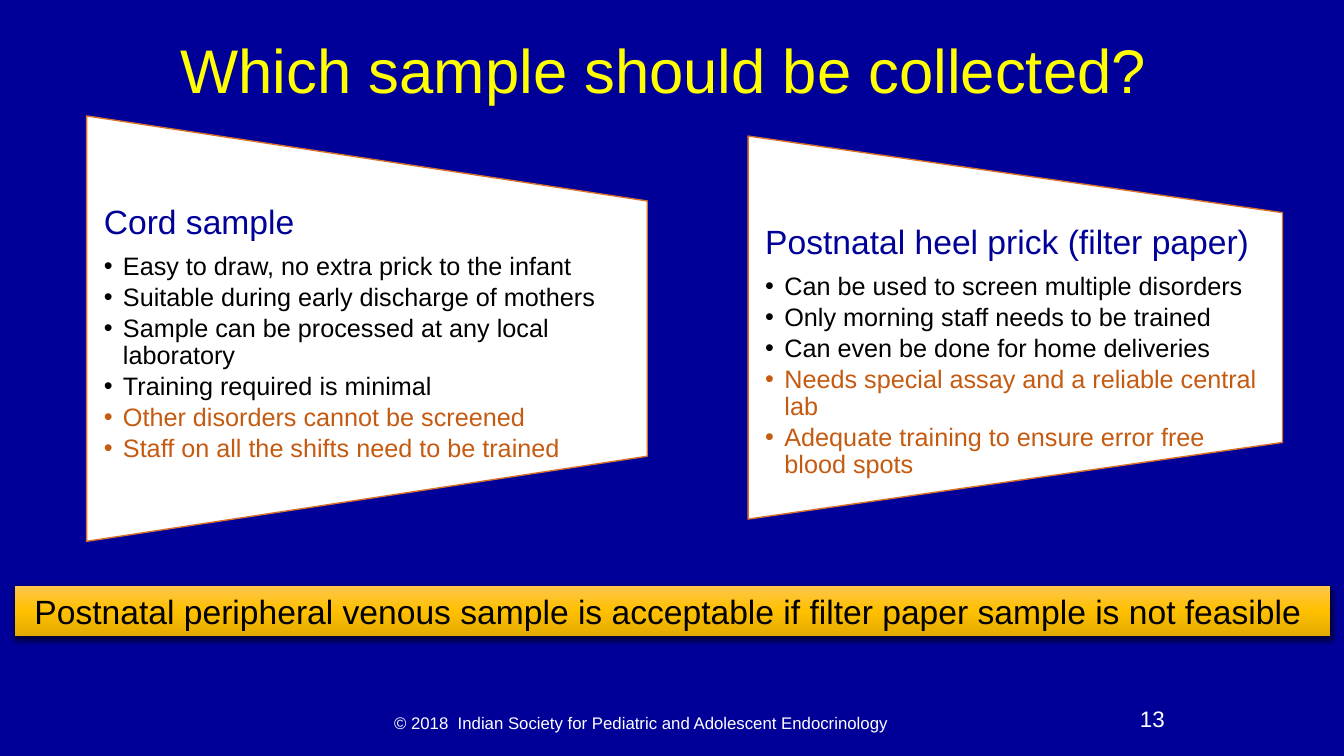
from copy import deepcopy

from lxml import etree
from pptx import Presentation
from pptx.dml.color import RGBColor
from pptx.enum.shapes import MSO_SHAPE
from pptx.enum.text import MSO_ANCHOR, MSO_AUTO_SIZE, PP_ALIGN
from pptx.oxml.ns import qn
from pptx.util import Inches, Pt

CENTER, LEFT = PP_ALIGN.CENTER, PP_ALIGN.LEFT
MIDDLE, TOP = MSO_ANCHOR.MIDDLE, MSO_ANCHOR.TOP
FIXED = MSO_AUTO_SIZE.NONE
RECTANGLE = MSO_SHAPE.RECTANGLE
TITLE_ONLY = 5
FONT = "Arial"
COLORS = {
    "background": "000099", "title": "FFFF00", "heading": "000099",
    "benefit": "000000", "drawback": "C55A11", "panel": "FFFFFF",
    "outline": "D7712C", "footer": "FFFFFF", "banner_text": "000000",
    "shadow": "000000", "banner_top": "FFC64B", "banner_middle": "FFC000",
    "banner_bottom": "E3AB00",
}
TAPER = 0.2  # share of a panel's height lost at each right-hand corner

# Panel: left, top, width, height, heading, benefits, drawbacks
PANELS = [
    (0.86, 1.15, 5.56, 4.22, "Cord sample",
     ["Easy to draw, no extra prick to the infant",
      "Suitable during early discharge of mothers",
      "Sample can be processed at any local laboratory",
      "Training required is minimal"],
     ["Other disorders cannot be screened",
      "Staff on all the shifts need to be trained"]),
    (7.42, 1.35, 5.3, 3.8, "Postnatal heel prick (filter paper)",
     ["Can be used to screen multiple disorders",
      "Only morning staff needs to be trained",
      "Can even be done for home deliveries"],
     ["Needs special assay and a reliable central lab",
      "Adequate training to ensure error free blood spots"]),
]


def rgb(name):
    return RGBColor.from_string(COLORS[name])


def style(paragraph, size, color, align=CENTER):
    paragraph.alignment = align
    paragraph.font.name = FONT
    paragraph.font.size = Pt(size)
    paragraph.font.color.rgb = rgb(color)


def set_text(shape, text, size, color, anchor=MIDDLE):
    frame = shape.text_frame
    frame.auto_size = FIXED
    frame.word_wrap = True
    frame.vertical_anchor = anchor
    frame.text = text
    style(frame.paragraphs[0], size, color)
    return frame.paragraphs[0]


def add_label(slide, box, text, size, anchor):
    label = slide.shapes.add_textbox(*map(Inches, box))
    set_text(label, text, size, "footer", anchor)


def add_bullet(paragraph, color):
    properties = paragraph._p.get_or_add_pPr()
    properties.set("marL", str(Inches(0.19)))
    properties.set("indent", str(Inches(-0.19)))
    bullet_color = etree.SubElement(properties, qn("a:buClr"))
    etree.SubElement(bullet_color, qn("a:srgbClr"), val=COLORS[color])
    etree.SubElement(properties, qn("a:buFont"), typeface=FONT)
    etree.SubElement(properties, qn("a:buChar"), char="•")


def add_panel(slide, left, top, width, height, heading, benefits, drawbacks):
    right, bottom, drop = left + width, top + height, height * TAPER
    corners = [(left, top), (right, top + drop), (right, bottom - drop)]
    outline = slide.shapes.build_freeform(Inches(left), Inches(bottom))
    outline.add_line_segments([(Inches(x), Inches(y)) for x, y in corners])
    panel = outline.convert_to_shape()
    panel.shadow.inherit = False
    panel.fill.solid()
    panel.fill.fore_color.rgb = rgb("panel")
    panel.line.color.rgb = rgb("outline")
    panel.line.width = Pt(1)

    frame = panel.text_frame
    frame.margin_left = frame.margin_right = Inches(0.17)
    frame.margin_top = frame.margin_bottom = Inches(0.89)
    first = set_text(panel, heading, 24, "heading", TOP)
    first.alignment = LEFT
    first.line_spacing = 0.9
    first.space_after = Pt(8.4)
    points = [(text, "benefit") for text in benefits]
    points += [(text, "drawback") for text in drawbacks]
    for text, color in points:
        point = frame.add_paragraph()
        point.text = text
        point.level = 1
        add_bullet(point, color)
        style(point, 18, color, LEFT)
        point.line_spacing = 0.9
        point.space_after = Pt(2.7)


def add_banner(slide, box, text):
    banner = slide.shapes.add_shape(RECTANGLE, *map(Inches, box))
    banner.line.fill.background()
    set_text(banner, text, 24, "banner_text")

    # Three-stop vertical gradient
    banner.fill.gradient()
    banner.fill.gradient_angle = 270
    stop_list = banner._element.spPr.find(".//" + qn("a:gsLst"))
    stop_list.insert(1, deepcopy(stop_list[0]))
    names = ("banner_top", "banner_middle", "banner_bottom")
    for index, (stop, name) in enumerate(zip(banner.fill.gradient_stops, names)):
        stop.position = index / 2
        stop.color.rgb = rgb(name)

    # Soft shadow straight below
    banner.shadow.inherit = False
    effects = banner._element.spPr.find(qn("a:effectLst"))
    shadow = etree.SubElement(effects, qn("a:outerShdw"), blurRad=str(Pt(4.5)),
                              dist=str(Pt(1.5)), dir="5400000", rotWithShape="0")
    tint = etree.SubElement(shadow, qn("a:srgbClr"), val=COLORS["shadow"])
    etree.SubElement(tint, qn("a:alpha"), val="63000")


def main():
    deck = Presentation()
    deck.slide_width, deck.slide_height = Inches(13.33), Inches(7.5)
    slide = deck.slides.add_slide(deck.slide_layouts[TITLE_ONLY])
    slide.background.fill.solid()
    slide.background.fill.fore_color.rgb = rgb("background")

    # Title
    title = slide.shapes.title
    title.left, title.top = Inches(0.92), Inches(0)
    title.width, title.height = Inches(11.5), Inches(1.45)
    heading = set_text(title, "Which sample should be collected? ", 44, "title")
    heading.line_spacing = 0.9

    # Comparison panels and the fallback advice
    for panel in PANELS:
        add_panel(slide, *panel)
    add_banner(slide, (0.15, 5.81, 13.04, 0.5),
               "Postnatal peripheral venous sample is acceptable "
               "if filter paper sample is not feasible ")

    # Footer
    add_label(slide, (3.77, 6.95, 5.18, 0.45),
              "© 2018  Indian Society for Pediatric and Adolescent Endocrinology",
              12, MIDDLE)
    add_label(slide, (9.93, 6.95, 3, 0.4), "13", 16, TOP)
    deck.save("out.pptx")


if __name__ == "__main__":
    main()
